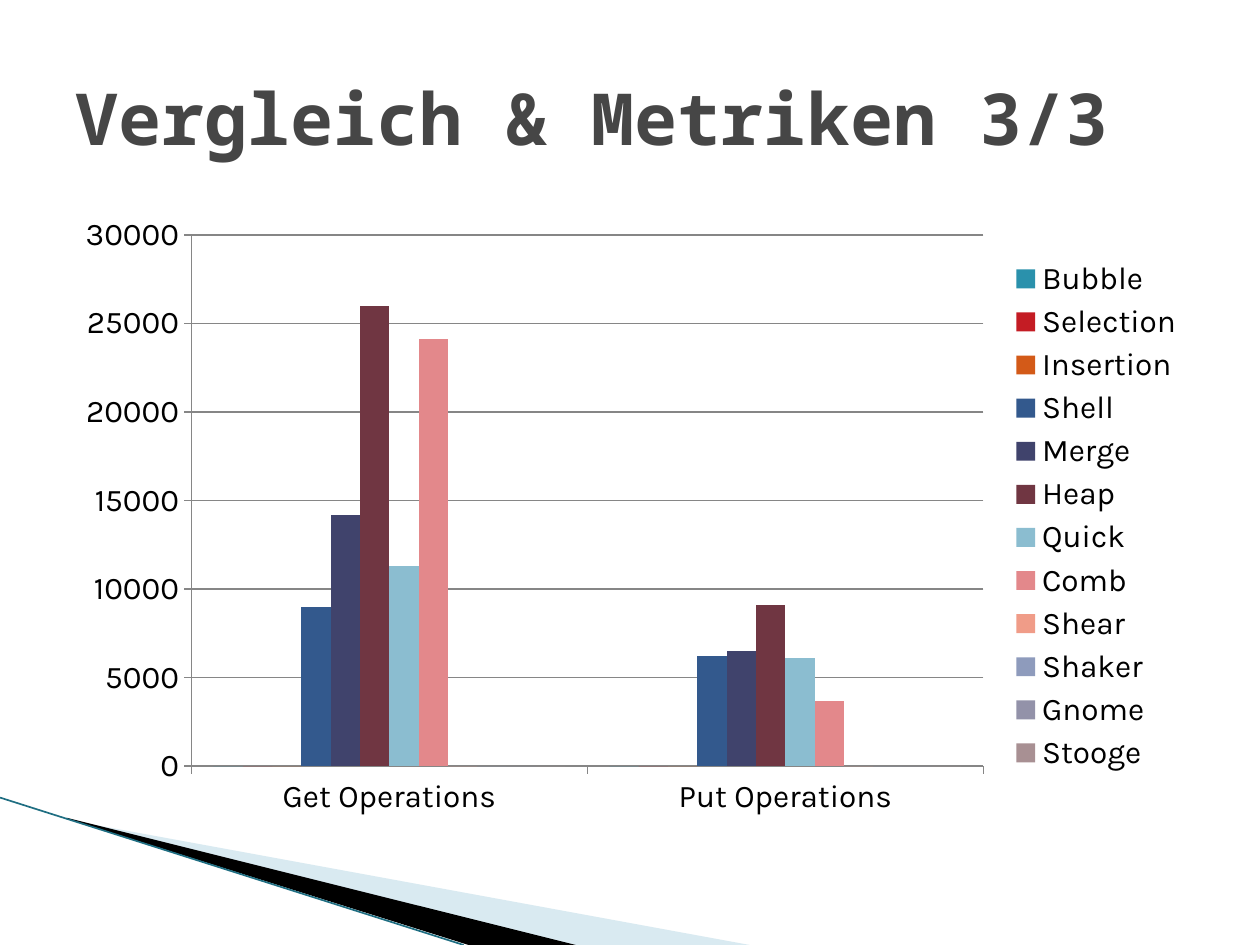
import pptx
import pptx.chart.data
import pptx.dml.color
import pptx.enum.chart
import pptx.enum.shapes
import pptx.enum.text
import pptx.util
from lxml import etree
from pptx.oxml.ns import qn

Inches = pptx.util.Inches
Pt = pptx.util.Pt
RGBColor = pptx.dml.color.RGBColor

BLACK = RGBColor(0x00, 0x00, 0x00)
TITLE_GRAY = RGBColor(0x46, 0x46, 0x46)
AXIS_GRAY = RGBColor(0x86, 0x86, 0x86)
PALE_BLUE = RGBColor(0xA0, 0xCB, 0xDC)
EDGE_TEAL = RGBColor(0x1F, 0x6E, 0x82)

OPERATIONS = ["Get Operations", "Put Operations"]
SORTS = [
    ("Bubble", (0, 0), RGBColor(0x2A, 0x91, 0xAC)),
    ("Selection", (0, 0), RGBColor(0xC4, 0x1C, 0x24)),
    ("Insertion", (0, 0), RGBColor(0xD3, 0x5A, 0x18)),
    ("Shell", (9000, 6200), RGBColor(0x33, 0x59, 0x8D)),
    ("Merge", (14200, 6500), RGBColor(0x40, 0x43, 0x6C)),
    ("Heap", (26000, 9100), RGBColor(0x70, 0x36, 0x42)),
    ("Quick", (11300, 6100), RGBColor(0x8B, 0xBD, 0xD0)),
    ("Comb", (24100, 3700), RGBColor(0xE3, 0x88, 0x8B)),
    ("Shear", (0, 0), RGBColor(0xF0, 0x9C, 0x88)),
    ("Shaker", (0, 0), RGBColor(0x8E, 0x9B, 0xBC)),
    ("Gnome", (0, 0), RGBColor(0x93, 0x92, 0xA9)),
    ("Stooge", (0, 0), RGBColor(0xA8, 0x90, 0x93)),
]


def set_format(target, values):
    for name, value in values.items():
        setattr(target, name, value)


class SlideWriter:
    title_font = {"name": "Noto Sans Mono", "size": Pt(41), "bold": True}
    chart_font = {"name": "Karla", "size": Pt(18)}

    def __init__(self, slide):
        self.slide = slide

    def title(self, wording, left, top, width, height):
        box = self.slide.shapes.add_textbox(
            Inches(left), Inches(top), Inches(width), Inches(height))
        frame = box.text_frame
        set_format(frame, {
            "word_wrap": True,
            "vertical_anchor": pptx.enum.text.MSO_ANCHOR.MIDDLE,
        })
        run = frame.paragraphs[0].add_run()
        run.text = wording
        set_format(run.font, self.title_font)
        run.font.color.rgb = TITLE_GRAY

    def wedge(self, points, color, opacity=100):
        """Filled outline through points in inches; opacity in percent."""
        corners = [(Inches(x), Inches(y)) for x, y in points]
        builder = self.slide.shapes.build_freeform(*corners[0], scale=1.0)
        builder.add_line_segments(corners[1:], close=True)
        wedge = builder.convert_to_shape()
        wedge.shadow.inherit = False
        wedge.line.fill.background()
        wedge.fill.solid()
        wedge.fill.fore_color.rgb = color
        if opacity < 100:
            fill_color = wedge.fill._xPr.find(qn("a:solidFill"))[0]
            etree.SubElement(fill_color, qn("a:alpha"), val=str(opacity * 1000))

    def line(self, start, end, color, weight):
        edge = self.slide.shapes.add_connector(
            pptx.enum.shapes.MSO_CONNECTOR.STRAIGHT,
            *(Inches(value) for value in start + end))
        edge.line.color.rgb = color
        edge.line.width = Pt(weight)
        etree.SubElement(edge._element.spPr, qn("a:effectLst"))

    def column_chart(self, categories, rows, left, top, width, height):
        data = pptx.chart.data.CategoryChartData()
        data.categories = categories
        for name, values, _ in rows:
            data.add_series(name, values)
        chart = self.slide.shapes.add_chart(
            pptx.enum.chart.XL_CHART_TYPE.COLUMN_CLUSTERED,
            Inches(left), Inches(top), Inches(width), Inches(height), data).chart
        set_format(chart, {"has_title": False, "has_legend": True})
        set_format(chart.font, self.chart_font)
        chart.font.color.rgb = BLACK
        set_format(chart.legend, {
            "position": pptx.enum.chart.XL_LEGEND_POSITION.RIGHT,
            "include_in_layout": False,
        })
        plot = chart.plots[0]
        set_format(plot, {"gap_width": 150, "overlap": 0, "vary_by_categories": False})
        for series, (_, _, color) in zip(plot.series, rows):
            series.format.fill.solid()
            series.format.fill.fore_color.rgb = color
        self.style_axes(chart)

    def style_axes(self, chart):
        set_format(chart.value_axis, {
            "minimum_scale": 0, "maximum_scale": 30000, "major_unit": 5000,
            "has_major_gridlines": True,
        })
        axes = (chart.category_axis, chart.value_axis)
        for axis in axes:
            axis.major_tick_mark = pptx.enum.chart.XL_TICK_MARK.OUTSIDE
        for ruled in axes + (chart.value_axis.major_gridlines,):
            ruled.format.line.color.rgb = AXIS_GRAY
            ruled.format.line.width = Pt(0.75)


def main():
    deck = pptx.Presentation()
    set_format(deck, {"slide_width": Inches(10), "slide_height": Inches(7.5)})
    writer = SlideWriter(deck.slides.add_slide(deck.slide_layouts[6]))
    writer.wedge([(0.55, 6.51), (5.95, 7.5), (4.56, 7.5), (0.55, 6.5)],
                 PALE_BLUE, opacity=40)
    writer.wedge([(0.53, 6.49), (4.57, 7.5), (3.72, 7.5), (0.54, 6.5)], BLACK)
    writer.line((0, 6.33), (3.68, 7.5), EDGE_TEAL, 0.95)
    writer.column_chart(OPERATIONS, SORTS, 0.5, 1.62, 9, 4.95)
    writer.title("Vergleich & Metriken 3/3", 0.5, 0.3, 9, 1.25)
    deck.save("out.pptx")


if __name__ == "__main__":
    main()
